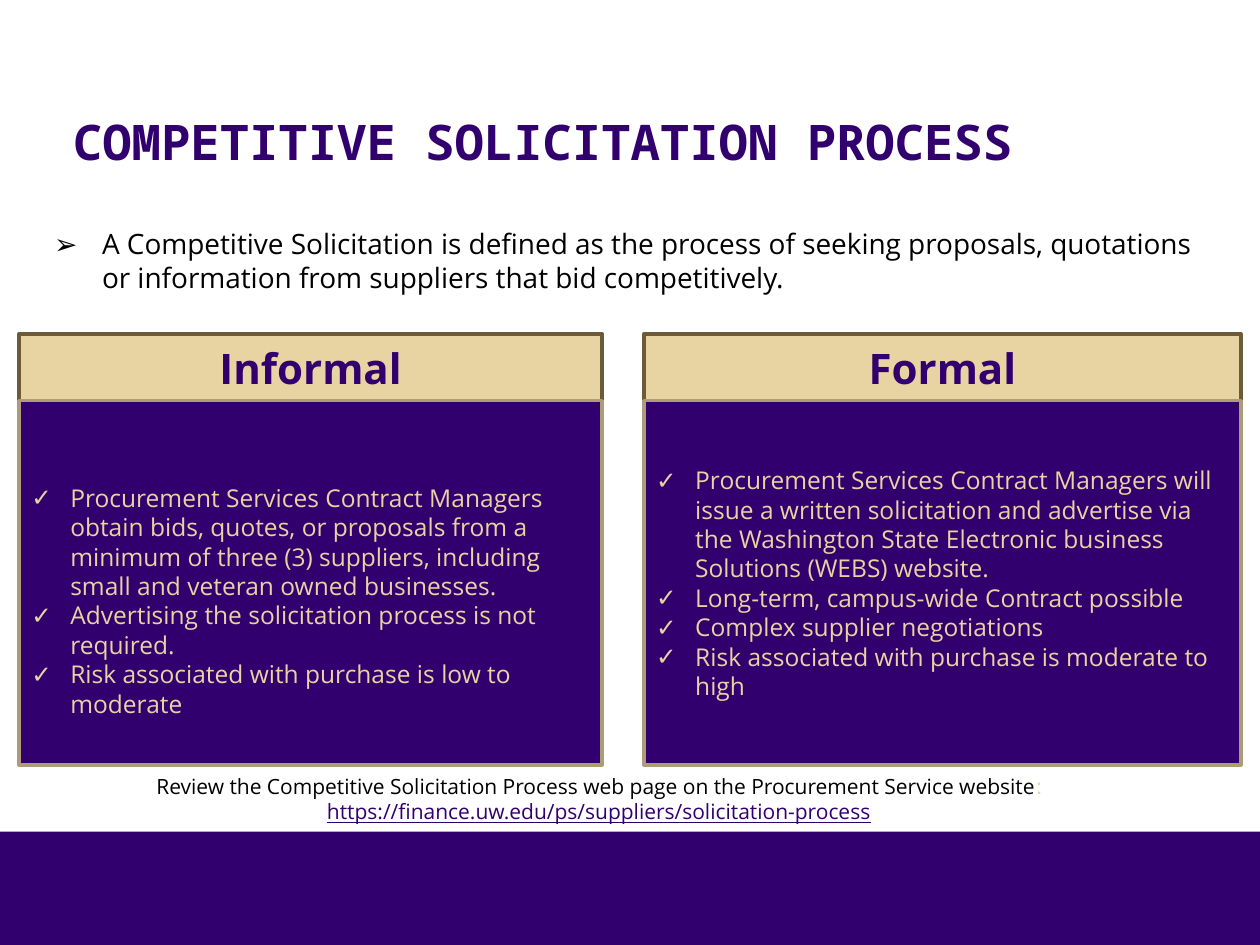
from dataclasses import dataclass

from lxml import etree
from pptx import Presentation
from pptx import util as u
from pptx.dml.color import RGBColor
from pptx.enum import shapes, text
from pptx.oxml.ns import qn

PURPLE = RGBColor(0x32, 0x00, 0x6E)
GOLD = RGBColor(0xE8, 0xD3, 0xA2)
BROWN = RGBColor(0x6B, 0x5B, 0x38)
TAN = RGBColor(0xAC, 0x9C, 0x78)
BLACK = RGBColor(0, 0, 0)
SANS = "Open Sans"
MONO = "Noto Sans Mono"

COLS, ROWS = 100, 75
CELL = u.Inches(0.1)
HEAD_TOP, HEAD_ROWS = 26.5, 5.3
LIST_TOP, LIST_ROWS = HEAD_TOP + HEAD_ROWS, 28.9


@dataclass
class Box:
    """A place on the grid, in columns and rows."""
    col: float
    row: float
    wide: float
    tall: float

    def spans(self) -> list[int]:
        return [round(n * CELL) for n in (self.col, self.row, self.wide, self.tall)]


@dataclass
class Panel:
    col: float
    wide: float
    head: str
    items: list[str]
    pad: float = 0.05


PANELS = [
    Panel(1.5, 46.3, "Informal", [
        "Procurement Services Contract Managers obtain bids, quotes, or proposals "
        "from a minimum of three (3) suppliers, including small and veteran owned "
        "businesses.",
        "Advertising the solicitation process is not required.",
        "Risk associated with purchase is low to moderate",
    ], pad=0.33),
    Panel(51.1, 47.4, "Formal", [
        "Procurement Services Contract Managers will issue a written solicitation "
        "and advertise via the Washington State Electronic business Solutions "
        "(WEBS) website.",
        "Long-term, campus-wide Contract possible",
        "Complex supplier negotiations",
        "Risk associated with purchase is moderate to high",
    ]),
]


def place(shape, box: Box) -> None:
    shape.left, shape.top, shape.width, shape.height = box.spans()


def style(para, size: float, color: RGBColor, face: str = SANS, bold: bool = False) -> None:
    font = para.font
    font.size, font.name, font.bold = u.Pt(size), face, bold
    font.color.rgb = color


def bullet(para, mark: str, indent: float) -> None:
    props = para._p.get_or_add_pPr()
    props.set("marL", str(u.Inches(indent)))
    props.set("indent", str(-u.Inches(indent)))
    etree.SubElement(props, qn("a:buFont"), typeface=SANS)
    etree.SubElement(props, qn("a:buChar"), char=mark)


def block(slide, box: Box, fill: RGBColor, edge: RGBColor | None = None):
    """Draw a flat rectangle, with a border if an edge colour is given."""
    shape = slide.shapes.add_shape(shapes.MSO_SHAPE.RECTANGLE, *box.spans())
    shape.shadow.inherit = False
    shape.fill.solid()
    shape.fill.fore_color.rgb = fill
    if edge is None:
        shape.line.fill.background()
    else:
        shape.line.color.rgb = edge
        shape.line.width = u.Pt(2)
    frame = shape.text_frame
    frame.word_wrap = True
    frame.vertical_anchor = text.MSO_ANCHOR.MIDDLE
    return frame


def draw(slide, panel: Panel) -> None:
    head = block(slide, Box(panel.col, HEAD_TOP, panel.wide, HEAD_ROWS), GOLD, BROWN)
    para = head.paragraphs[0]
    para.text = panel.head
    para.alignment = text.PP_ALIGN.CENTER
    style(para, 24, PURPLE, bold=True)

    body = block(slide, Box(panel.col, LIST_TOP, panel.wide, LIST_ROWS), PURPLE, TAN)
    body.margin_top = u.Inches(panel.pad)
    body.text = "\n".join(panel.items)
    for para in body.paragraphs:
        para.alignment = text.PP_ALIGN.LEFT
        bullet(para, "✓", 0.31)
        style(para, 14, GOLD)


def title(slide) -> None:
    shape = slide.shapes.title
    place(shape, Box(4.8, 3.1, 88.9, 10.9))
    frame = shape.text_frame
    frame.text = "COMPETITIVE SOLICITATION PROCESS"
    frame.auto_size = text.MSO_AUTO_SIZE.NONE
    frame.vertical_anchor = text.MSO_ANCHOR.BOTTOM
    para = frame.paragraphs[0]
    para.alignment = text.PP_ALIGN.LEFT
    style(para, 28, PURPLE, MONO, bold=True)


def intro(slide) -> None:
    shape = slide.placeholders[1]
    place(shape, Box(3.3, 17.5, 93.3, 6.4))
    frame = shape.text_frame
    frame.text = ("A Competitive Solicitation is defined as the process of seeking "
                  "proposals, quotations or information from suppliers that bid "
                  "competitively.")
    frame.auto_size = text.MSO_AUTO_SIZE.NONE
    para = frame.paragraphs[0]
    para.space_before = u.Pt(0)
    bullet(para, "➢", 0.38)
    style(para, 16, BLACK)


def review(slide) -> None:
    frame = slide.shapes.add_textbox(*Box(3.3, 60.9, 88.5, 5.1).spans()).text_frame
    frame.word_wrap = True
    para = frame.paragraphs[0]
    para.alignment = text.PP_ALIGN.CENTER
    style(para, 12, BLACK)
    parts = [
        ("Review the Competitive Solicitation Process web page on the "
         "Procurement Service website", BLACK),
        (": ", GOLD),
        ("https://finance.uw.edu/ps/suppliers/solicitation-process", PURPLE),
    ]
    for words, color in parts:
        run = para.add_run()
        run.text = words
        run.font.color.rgb = color
    run.font.underline = True


def main() -> None:
    deck = Presentation()
    deck.slide_width, deck.slide_height = COLS * CELL, ROWS * CELL
    slide = deck.slides.add_slide(deck.slide_layouts[1])
    block(slide, Box(0, 66, COLS, 9), PURPLE)
    title(slide)
    intro(slide)
    for panel in PANELS:
        draw(slide, panel)
    review(slide)
    deck.save("out.pptx")


if __name__ == "__main__":
    main()
